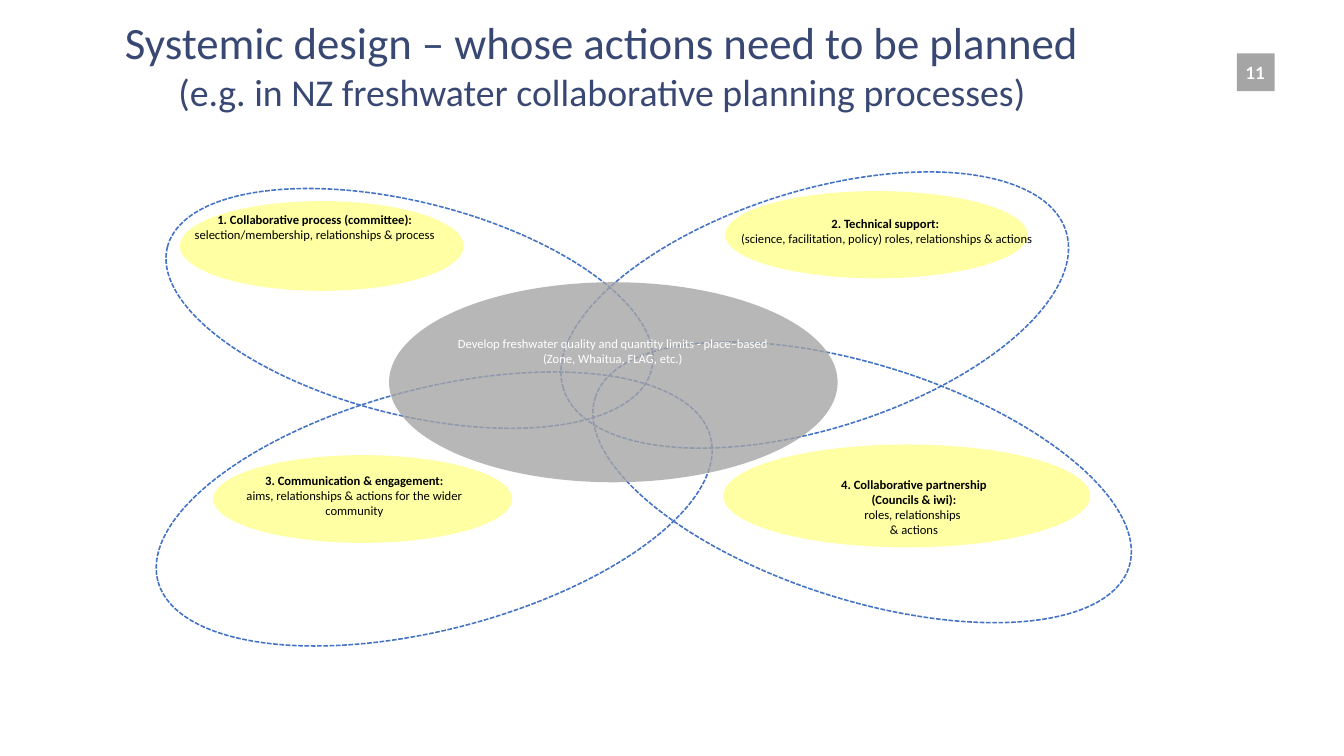
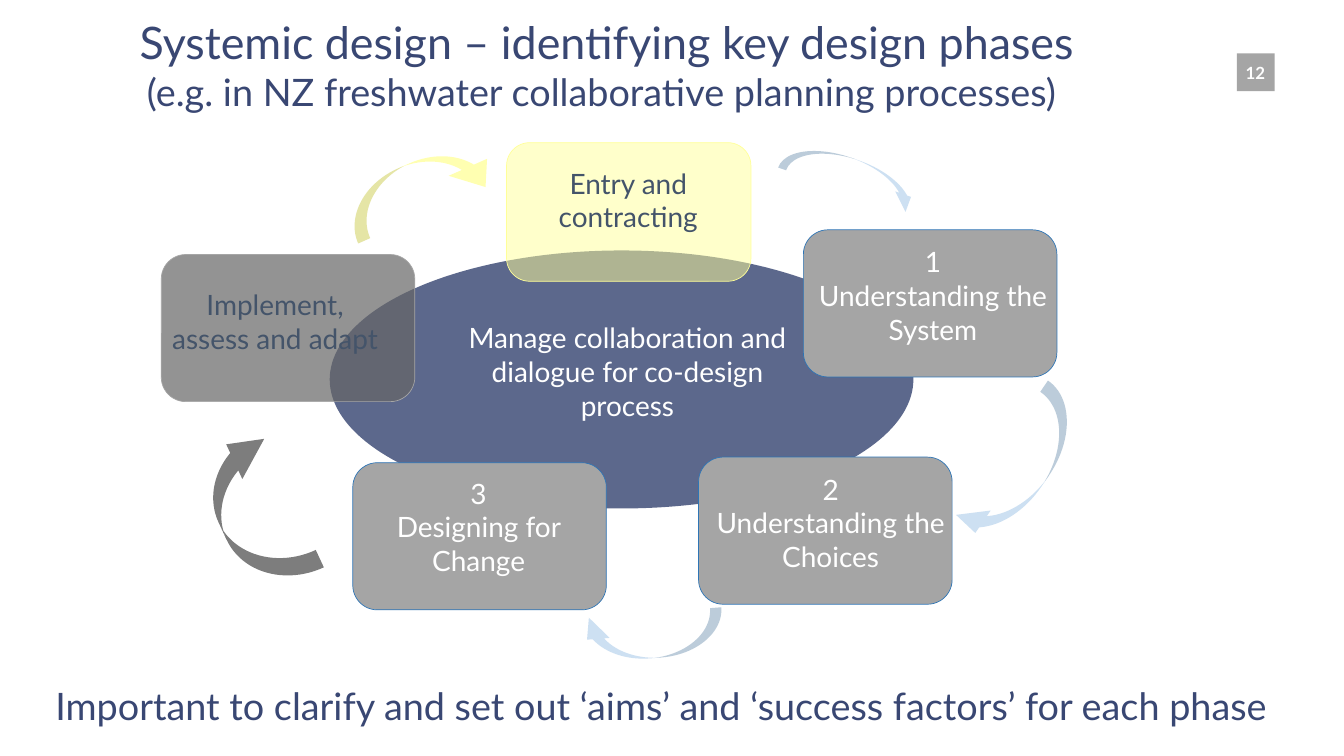
from lxml.etree import SubElement
from pptx import Presentation
from pptx.dml.color import RGBColor
from pptx.enum.dml import MSO_LINE_DASH_STYLE as DASH
from pptx.enum.shapes import MSO_SHAPE as SHAPE
from pptx.enum.text import MSO_ANCHOR, MSO_AUTO_SIZE as AUTO_SIZE, PP_ALIGN as ALIGN
from pptx.oxml.ns import qn
from pptx.util import Pt

WHITE = RGBColor(0xFF, 0xFF, 0xFF)
BLACK = RGBColor(0x00, 0x00, 0x00)
NAVY = RGBColor(0x39, 0x47, 0x73)
SLATE = RGBColor(0x44, 0x54, 0x6A)
GRAY = RGBColor(0xA5, 0xA5, 0xA5)
DARK_GRAY = RGBColor(0x66, 0x66, 0x66)
EDGE_GRAY = RGBColor(0xA6, 0xA6, 0xA6)
YELLOW = RGBColor(0xFF, 0xFF, 0x99)
BRIGHT_YELLOW = RGBColor(0xFF, 0xFF, 0x66)
BLUE = RGBColor(0x44, 0x72, 0xC4)
EDGE_BLUE = RGBColor(0x2E, 0x75, 0xB6)
SKY = RGBColor(0x9D, 0xC3, 0xE6)

CALIBRI = "Calibri"
LATO = "Lato"
CARD_SIZE = (362.2, 210.2)
SUBTITLE = "(e.g. in NZ freshwater collaborative planning processes) "


def add_shape(slide, kind, box, fill=None, opacity=100, line=None, line_width=1, rotation=0):
    shape = slide.shapes.add_shape(kind, *map(Pt, box))
    shape.shadow.inherit = False
    shape.rotation = rotation
    if fill is None:
        shape.fill.background()
    else:
        shape.fill.solid()
        shape.fill.fore_color.rgb = fill
        if opacity < 100:
            color = shape.fill._xPr.find(qn("a:solidFill"))[0]
            SubElement(color, qn("a:alpha"), val=str(opacity * 1000))
    if line is None:
        shape.line.fill.background()
    else:
        shape.line.color.rgb = line
        shape.line.width = Pt(line_width)
    return shape


def add_text(slide, box, paragraphs, size, font, color, align=ALIGN.CENTER):
    shape = slide.shapes.add_textbox(*map(Pt, box))
    frame = shape.text_frame
    frame.word_wrap = True
    frame.auto_size = AUTO_SIZE.SHAPE_TO_FIT_TEXT
    frame.vertical_anchor = MSO_ANCHOR.TOP
    for index, runs in enumerate(paragraphs):
        paragraph = frame.paragraphs[0] if index == 0 else frame.add_paragraph()
        paragraph.alignment = align
        for text, *options in runs:
            style = options[0] if options else {}
            run = paragraph.add_run()
            run.text = text
            run.font.name = font
            run.font.size = Pt(style.get("size", size))
            run.font.bold = style.get("bold", False)
            run.font.color.rgb = color
    return shape


def bold(text):
    return text, {"bold": True}


def add_slide(presentation, number, title, title_font):
    slide = presentation.slides.add_slide(presentation.slide_layouts[6])
    add_shape(slide, SHAPE.RECTANGLE, (1767, 76.3, 54, 54), GRAY)
    badge = add_text(slide, (1763.3, 82, 60.5, 44), [[bold(str(number))]], 24, LATO, WHITE)
    frame = badge.text_frame
    frame.word_wrap = False
    frame.margin_left = frame.margin_right = Pt(14.4)
    frame.margin_top = frame.margin_bottom = Pt(7.2)
    add_text(slide, (52.6, 18, 1627.2, 150.5), [[(title,)], [(SUBTITLE, {"size": 54})]],
             64, title_font, NAVY)
    return slide


def add_topic(slide, ellipse_box, text_box, paragraphs):
    add_shape(slide, SHAPE.OVAL, ellipse_box, YELLOW, 90)
    add_text(slide, text_box, paragraphs, 18, CALIBRI, BLACK)


def add_orbit(slide, box, rotation):
    orbit = add_shape(slide, SHAPE.OVAL, box, line=BLUE, line_width=2.25, rotation=rotation)
    orbit.line.dash_style = DASH.SQUARE_DOT


def add_card(slide, box, text_box, lines, fill=GRAY, opacity=100, line=EDGE_BLUE, color=WHITE):
    add_shape(slide, SHAPE.ROUNDED_RECTANGLE, box, fill, opacity, line)
    add_text(slide, text_box, [[(text,)] for text in lines], 40, LATO, color)


def add_cycle_arrow(slide, box, rotation, fill, head=0.5):
    arrow = add_shape(slide, SHAPE.CURVED_DOWN_ARROW, box, fill, 51, rotation=rotation)
    for index, value in enumerate((0.25, head, 0.48)):
        arrow.adjustments[index] = value


def build_actions_slide(presentation):
    slide = add_slide(presentation, 11,
                      "Systemic design – whose actions need to be planned ", CALIBRI)
    topics = [
        ((304.6, 650.2, 427, 125.3), (313.2, 671.8, 386, 72.7),
         [[bold("3. Communication & engagement:")],
          [("aims, relationships & actions for the wider community",)]]),
        ((1033.2, 635, 524.2, 147), (1056.2, 677.5, 499, 94.3),
         [[bold("4. Collaborative partnership")], [bold("(Councils & iwi):")],
          [("roles, relationships ",)], [("& actions",)]]),
        ((1036, 273, 432, 124.6), (1036, 305.3, 461.5, 51),
         [[bold("2. Technical support: ")],
          [("(science, facilitation, policy) roles, relationships & actions",)]]),
        ((257, 287.3, 405.4, 128.2), (257, 299.5, 385.2, 51),
         [[bold("1. Collaborative process (committee):"),
           (" selection/membership, relationships & process",)]]),
    ]
    for topic in topics:
        add_topic(slide, *topic)
    orbits = [
        ((212.4, 555, 815.8, 344.2), 345.4),
        ((831.6, 521.3, 800, 335.5), 17.6),
        ((228.2, 288.7, 713.5, 303.8), 14.2),
        ((787.7, 273, 752.4, 339.8), 342.6),
    ]
    for orbit in orbits:
        add_orbit(slide, *orbit)
    add_shape(slide, SHAPE.OVAL, (555.8, 403.2, 640.8, 285.8), GRAY, 80)
    add_text(slide, (613.4, 476, 524.2, 51),
             [[("Develop freshwater quality and quantity limits - place–based",)],
              [("(Zone, Whaitua, FLAG, etc.)",)]], 18, CALIBRI, WHITE)


def build_phases_slide(presentation):
    slide = add_slide(presentation, 12, "Systemic design – identifying key design phases", LATO)
    add_shape(slide, SHAPE.OVAL, (471, 357.8, 833.8, 368.6), NAVY, 82)
    add_card(slide, (723.6, 203.8, 349.2, 198), (761, 234, 273, 104.4),
             ["Entry and contracting"], YELLOW, 51, YELLOW, SLATE)
    add_card(slide, (1147.7, 328.3, *CARD_SIZE), (1155.6, 346.3, 354.2, 152.6),
             ["1", "Understanding the System"])
    add_card(slide, (230.4, 363.6, *CARD_SIZE), (237, 407.5, 311.8, 152.6),
             ["Implement, assess and adapt"], DARK_GRAY, 70, EDGE_GRAY, SLATE)
    add_card(slide, (998, 653, *CARD_SIZE), (1014.5, 671, 344.2, 152.6),
             ["2", "Understanding the Choices"])
    add_card(slide, (504, 661, *CARD_SIZE), (502.6, 676.8, 362.2, 152.6),
             ["3", "Designing for Change"])
    add_cycle_arrow(slide, (486.7, 229.7, 229, 75), 336.1, BRIGHT_YELLOW, head=0.8)
    add_cycle_arrow(slide, (249.8, 674.6, 229.7, 109.4), 245.1, BLACK)
    add_cycle_arrow(slide, (1113.8, 226.8, 204.5, 47.5), 19.2, SKY)
    add_cycle_arrow(slide, (1332, 630.7, 252, 77.8), 124.4, SKY)
    add_cycle_arrow(slide, (827.3, 875.5, 206, 64.8), 175.5, SKY)
    center = add_text(slide, (656.6, 455, 479.5, 152.6),
                      [[("Manage collaboration and dialogue for co-design process",)]],
                      40, LATO, WHITE)
    center.text_frame.paragraphs[0].space_after = Pt(12)
    add_text(slide, (72, 972, 1847.5, 72.7),
             [[("Important to clarify and set out ‘aims’ and ‘success factors’ for each phase",)]],
             54, LATO, NAVY, ALIGN.LEFT)


def main():
    presentation = Presentation()
    presentation.slide_width = Pt(1920)
    presentation.slide_height = Pt(1080)
    build_actions_slide(presentation)
    build_phases_slide(presentation)
    presentation.save("out.pptx")


if __name__ == "__main__":
    main()
